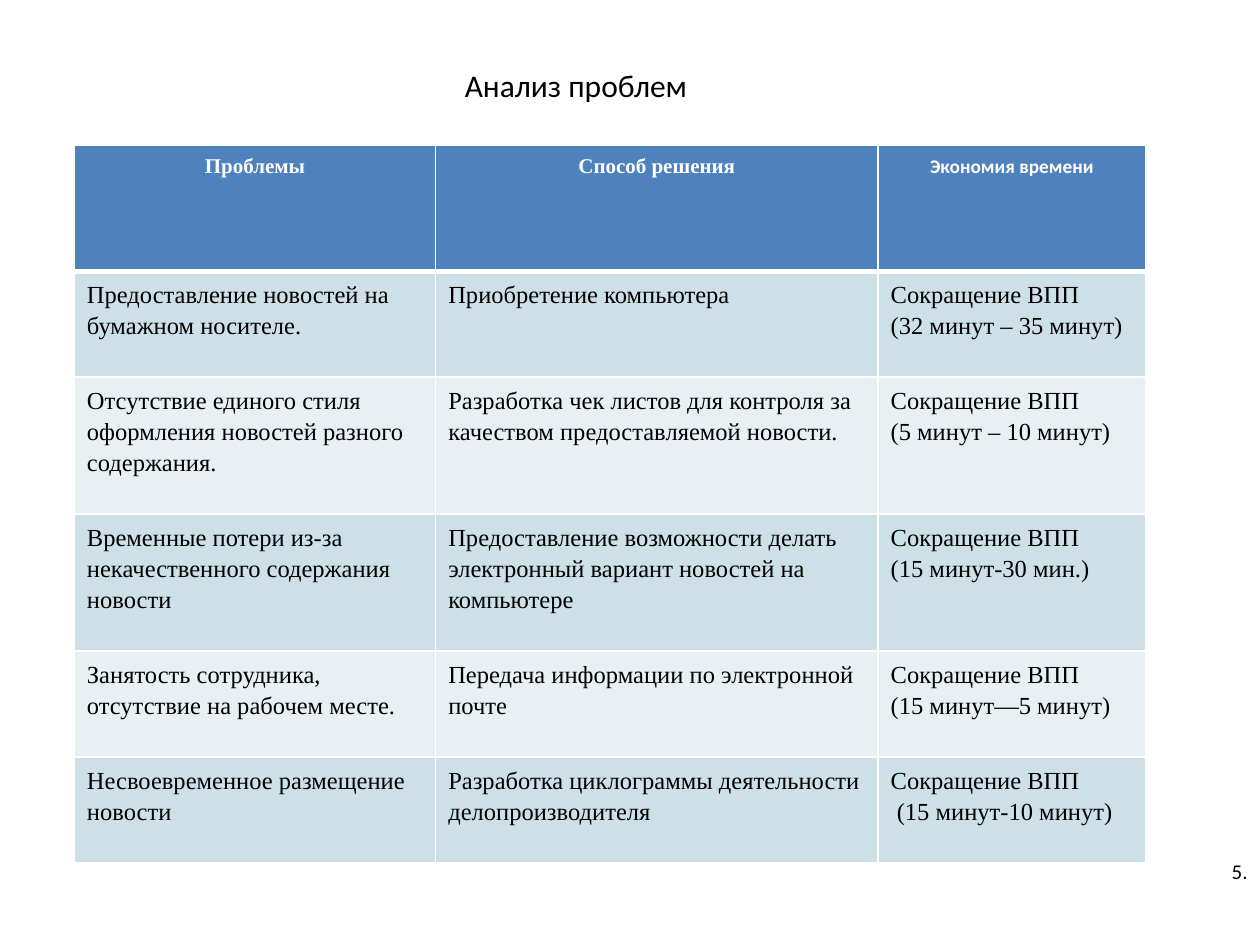
from lxml import etree
from pptx import Presentation
from pptx.dml.color import RGBColor
from pptx.enum.text import MSO_ANCHOR, PP_ALIGN
from pptx.oxml.ns import qn
from pptx.util import Pt

CENTER, LEFT, RIGHT = PP_ALIGN.CENTER, PP_ALIGN.LEFT, PP_ALIGN.RIGHT
MIDDLE = MSO_ANCHOR.MIDDLE
COLORS = {"header": "4F81BD", "odd": "CDE0E8", "even": "E8F0F4",
          "white": "FFFFFF", "black": "000000"}
SERIF, SANS = "Times New Roman", "Calibri"

ROWS = [
    ("Проблемы", "Способ решения", "Экономия времени"),
    ("Предоставление новостей на бумажном носителе.",
     "Приобретение компьютера",
     "Сокращение ВПП\n(32 минут – 35 минут)"),
    ("Отсутствие единого стиля оформления новостей разного содержания.",
     "Разработка чек листов для контроля за качеством предоставляемой новости.",
     "Сокращение ВПП\n(5 минут – 10 минут)"),
    ("Временные потери из-за некачественного содержания новости",
     "Предоставление возможности делать электронный вариант новостей на компьютере",
     "Сокращение ВПП\n(15 минут-30 мин.)"),
    ("Занятость сотрудника, отсутствие на рабочем месте.",
     "Передача информации по электронной почте",
     "Сокращение ВПП\n(15 минут—5 минут)"),
    ("Несвоевременное размещение новости",
     "Разработка циклограммы деятельности делопроизводителя",
     "Сокращение ВПП\n (15 минут-10 минут)"),
]
COLUMN_WIDTHS = [206.5, 252.8, 153]
ROW_HEIGHTS = [72, 60.5, 78.3, 78.3, 60.5, 60.2]


def write(frame, text, font, size, color, align=LEFT, bold=False, spacing=None):
    frame.text = text
    for para in frame.paragraphs:
        para.alignment = align
        if spacing:
            para.line_spacing = spacing
        for span in para.runs:
            span.font.name = font
            span.font.size = Pt(size)
            span.font.bold = bold
            span.font.color.rgb = RGBColor.from_string(COLORS[color])


def add_borders(cell, widths):
    properties = cell._tc.get_or_add_tcPr()
    for index, (side, width) in enumerate(widths.items()):
        line = etree.Element(qn("a:ln" + side), w=str(Pt(width)))
        fill = etree.SubElement(line, qn("a:solidFill"))
        etree.SubElement(fill, qn("a:srgbClr"), val=COLORS["white"])
        properties.insert(index, line)


deck = Presentation()
deck.slide_width, deck.slide_height = Pt(720), Pt(540)
page = deck.slides.add_slide(deck.slide_layouts[6])

table = page.shapes.add_table(
    len(ROWS), len(COLUMN_WIDTHS), Pt(42.5), Pt(83),
    Pt(sum(COLUMN_WIDTHS)), Pt(sum(ROW_HEIGHTS))).table
for column, width in zip(table.columns, COLUMN_WIDTHS):
    column.width = Pt(width)
for row, height in zip(table.rows, ROW_HEIGHTS):
    row.height = Pt(height)

for r, texts in enumerate(ROWS):
    for c, text in enumerate(texts):
        cell = table.cell(r, c)
        cell.fill.solid()
        shade = "header" if r == 0 else "odd" if r % 2 else "even"
        cell.fill.fore_color.rgb = RGBColor.from_string(COLORS[shade])
        add_borders(cell, {"L": 1, "R": 1, "T": 3 if r == 1 else 1, "B": 3 if r == 0 else 1})
        if r == 0:
            font, size = (SANS, 11) if c == 2 else (SERIF, 12)
            write(cell.text_frame, text, font, size, "white", CENTER, True, 1.15)
        else:
            write(cell.text_frame, text, SERIF, 14, "black", spacing=1.15)

number = page.shapes.add_textbox(Pt(692), Pt(484), Pt(28), Pt(28))
number.text_frame.word_wrap = True
number.text_frame.vertical_anchor = MIDDLE
write(number.text_frame, "5.", SANS, 12, "black", RIGHT)

title = page.shapes.add_textbox(Pt(258.5), Pt(34), Pt(142.5), Pt(29))
title.text_frame.word_wrap = False
write(title.text_frame, "Анализ проблем", SANS, 18, "black")

deck.save("out.pptx")
